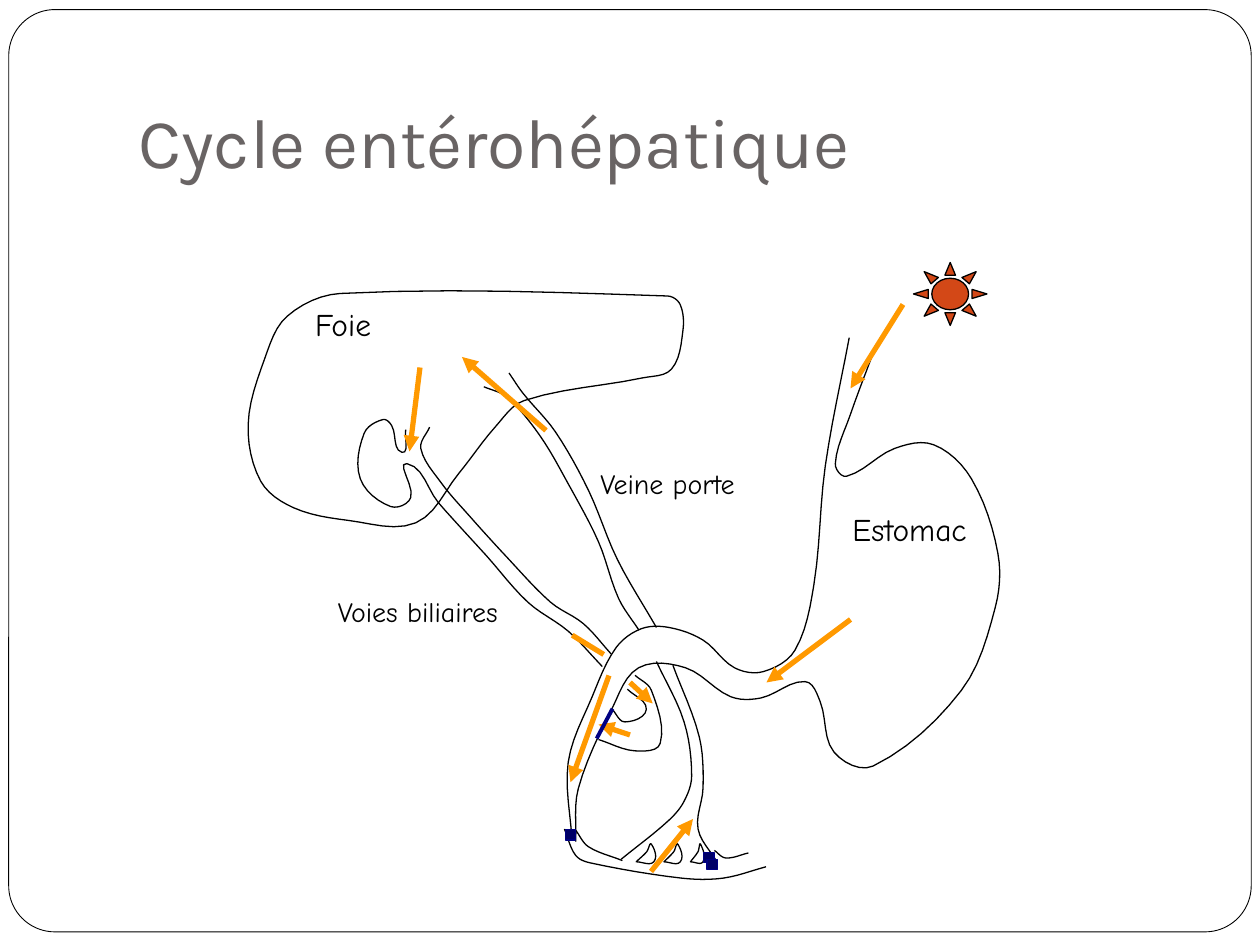
import math

import pptx
import pptx.dml.color
import pptx.enum.shapes
import pptx.enum.text
import pptx.oxml
import pptx.oxml.ns
import pptx.util

Pt = pptx.util.Pt
RGBColor = pptx.dml.color.RGBColor
PRESET = pptx.enum.shapes.MSO_SHAPE

WHITE = RGBColor(0xFF, 0xFF, 0xFF)
BLACK = RGBColor(0x00, 0x00, 0x00)
TITLE_GREY = RGBColor(0x69, 0x64, 0x64)
FLOW_ORANGE = RGBColor(0xFF, 0x99, 0x00)
SUN_RED = RGBColor(0xD3, 0x48, 0x17)
NAVY = RGBColor(0x00, 0x00, 0x66)
NAVY_LINE = RGBColor(0x00, 0x00, 0x82)

GRID = 0.72  # points per unit of the anatomical outlines
CURVE_STEPS = 6
JUNCTION_SIZE = 6

LIVER = [(530, 235), (270, 233), (228, 251), (210, 285), (197, 337), (207, 382),
         (233, 403), (276, 413), (330, 415), (364, 376), (393, 339), (416, 318),
         (510, 300), (533, 293), (542, 263), (540, 242)]

OUTLINES = [
    # Oesophagus, lesser curvature and outer duodenum
    [(674, 268), (655, 370), (646, 464), (631, 516), (606, 533), (583, 530),
     (558, 508), (531, 498), (509, 499), (489, 514), (470, 553), (451, 605),
     (454, 667)],
    # Greater curvature and inner duodenum
    [(695, 275), (675, 329), (663, 368), (672, 378), (710, 356), (741, 353),
     (771, 380), (792, 439), (790, 482), (763, 548), (693, 608), (662, 597),
     (651, 557), (639, 541), (604, 554), (580, 553), (544, 530), (507, 530),
     (486, 562), (459, 626), (457, 668)],
    # Pancreatic duct loops
    [(486, 563), (496, 573), (513, 563), (498, 547)],
    [(475, 587), (504, 596), (524, 590), (517, 548), (504, 536)],
    # Gallbladder and lower wall of the bile duct
    [(478, 529), (451, 501), (419, 478), (386, 441), (348, 399), (323, 368),
     (326, 395), (310, 402), (286, 380), (289, 344), (304, 333), (311, 338),
     (319, 359), (322, 341)],
    # Upper wall of the bile duct
    [(341, 339), (334, 356), (350, 383), (373, 410), (403, 443), (437, 478),
     (463, 495), (485, 519)],
    # Portal vein below the duodenum
    [(493, 682), (531, 651), (543, 636), (549, 616), (543, 573), (521, 525)],
    [(569, 684), (554, 658), (558, 625), (555, 585), (534, 528)],
    # Portal vein above the duodenum
    [(507, 500), (491, 475), (475, 430), (451, 384), (428, 345), (402, 315),
     (384, 307)],
    [(404, 296), (415, 312), (441, 343), (467, 389), (490, 444), (521, 498)],
    # Intestine: upper and lower walls
    [(457, 659), (467, 672), (494, 683)],
    [(567, 675), (576, 681), (594, 677)],
    [(448, 658), (457, 679), (469, 685), (541, 697), (574, 697), (608, 688)],
]

# Gaps between the intestinal vessels: left edge and width
VESSEL_GAPS = [(505, 14), (527, 13), (548, 10)]
GAP_BASE, GAP_TOP = 684, 670

# Start and end of each flow arrow
FLOWS = [
    ((516, 174), (486, 222)),  # into the stomach
    ((486, 354), (438, 390)),  # out of the stomach
    ((348, 386), (326, 447)),  # down the duodenum
    ((372, 498), (396, 468)),  # intestine to portal vein
    ((312, 246), (264, 204)),  # portal vein to liver
    ((240, 210), (234, 258)),  # liver to bile duct
    ((360, 390), (373, 402)),  # into the pancreatic loop
    ((360, 420), (342, 414)),  # back to the duodenum
]
BILE_FLOW = ((327, 363), (345, 374))
PAPILLA = ((341, 422), (350, 405))

# Text, size, left, top and width
LABELS = [
    ("Foie", 18, 173, 171, 50),
    ("Estomac", 18, 480, 288, 85),
    ("Veine porte", 16, 336, 263, 101),
    ("Voies biliaires", 16, 186, 336, 119),
]
JUNCTIONS = [(323, 474), (402, 487), (404, 491)]


def smooth(anchors, closed=False):
    """Sample a smooth curve through the anchors, in grid units."""
    count = len(anchors)

    def anchor(i):
        return anchors[i % count if closed else max(0, min(i, count - 1))]

    def handle(i, reach):
        (ax, ay), (bx, by) = anchor(i - 1), anchor(i + 1)
        span = math.hypot(bx - ax, by - ay) or 1
        x, y = anchor(i)
        return x + (bx - ax) / span * reach, y + (by - ay) / span * reach

    curve = [anchors[0]]
    for i in range(count if closed else count - 1):
        start, end = anchor(i), anchor(i + 1)
        reach = math.dist(start, end) / 3
        controls = (start, handle(i, reach), handle(i + 1, -reach), end)
        for step in range(1, CURVE_STEPS + 1):
            t = step / CURVE_STEPS
            weights = ((1 - t) ** 3, 3 * t * (1 - t) ** 2, 3 * t * t * (1 - t), t ** 3)
            curve.append(tuple(sum(w * c[axis] for w, c in zip(weights, controls))
                               for axis in (0, 1)))
    return curve


def add_outline(slide, anchors, closed=False):
    curve = [(Pt(x * GRID), Pt(y * GRID)) for x, y in smooth(anchors, closed)]
    builder = slide.shapes.build_freeform(*curve[0], scale=1.0)
    builder.add_line_segments(curve[1:], close=closed)
    outline = builder.convert_to_shape()
    outline.shadow.inherit = False
    outline.fill.background()
    outline.line.color.rgb = BLACK
    outline.line.width = Pt(0.75)


def add_vessel_gap(slide, left, width):
    right = left + width
    add_outline(slide, [(left, GAP_BASE), (left + 0.6 * width, GAP_TOP + 6),
                        (right - 2, GAP_TOP), (right, GAP_BASE), (left, GAP_BASE)])


def add_preset(slide, preset, box, fill, line, width=0.75):
    figure = slide.shapes.add_shape(preset, *map(Pt, box))
    figure.shadow.inherit = False
    figure.fill.solid()
    figure.fill.fore_color.rgb = fill
    figure.line.color.rgb = line
    figure.line.width = Pt(width)
    return figure


def add_stroke(slide, ends, color, width, arrow=False):
    stroke = slide.shapes.add_connector(
        pptx.enum.shapes.MSO_CONNECTOR.STRAIGHT, *map(Pt, ends[0] + ends[1]))
    stroke.line.color.rgb = color
    stroke.line.width = Pt(width)
    namespace = pptx.oxml.ns.nsdecls("a")
    if arrow:
        stroke.element.spPr.find(pptx.oxml.ns.qn("a:ln")).append(
            pptx.oxml.parse_xml(f'<a:tailEnd {namespace} type="triangle"/>'))
    stroke.element.spPr.append(pptx.oxml.parse_xml(f"<a:effectLst {namespace}/>"))


def set_text(frame, text, font_name, size, color):
    frame.text = text
    font = frame.paragraphs[0].font
    font.name, font.size, font.color.rgb = font_name, Pt(size), color


def add_label(slide, text, size, left, top, width):
    box = (left, top, width, size * 1.2 + 7.2)
    frame = slide.shapes.add_textbox(*map(Pt, box)).text_frame
    frame.word_wrap = False
    frame.auto_size = pptx.enum.text.MSO_AUTO_SIZE.SHAPE_TO_FIT_TEXT
    set_text(frame, text, "Comic Neue", size, BLACK)


def add_title(slide, text):
    title = slide.shapes.title
    title.left, title.top, title.width, title.height = map(Pt, (72, 21.6, 612, 90))
    frame = title.text_frame
    frame.auto_size = pptx.enum.text.MSO_AUTO_SIZE.NONE
    frame.vertical_anchor = pptx.enum.text.MSO_ANCHOR.BOTTOM
    frame.margin_bottom = Pt(7.2)
    set_text(frame, text, "Karla", 40, TITLE_GREY)
    frame.paragraphs[0].alignment = pptx.enum.text.PP_ALIGN.LEFT


def main():
    deck = pptx.Presentation()
    deck.slide_width, deck.slide_height = Pt(720), Pt(540)
    slide = deck.slides.add_slide(deck.slide_layouts[5])

    # Page frame, behind the title
    page = add_preset(slide, PRESET.ROUNDED_RECTANGLE, (5, 5.5, 710, 527),
                      WHITE, BLACK, 0.5)
    page.adjustments[0] = 0.05
    slide.shapes.title.element.addprevious(page.element)
    add_title(slide, "Cycle entérohépatique")

    # Organs and vessels
    add_outline(slide, LIVER, closed=True)
    for anchors in OUTLINES:
        add_outline(slide, anchors)
    for gap in VESSEL_GAPS:
        add_vessel_gap(slide, *gap)
    for label in LABELS:
        add_label(slide, *label)

    # Flow through the cycle
    for ends in FLOWS:
        add_stroke(slide, ends, FLOW_ORANGE, 3, arrow=True)
    add_stroke(slide, BILE_FLOW, FLOW_ORANGE, 3)
    add_preset(slide, PRESET.SUN, (522, 150, 42, 36), SUN_RED, BLACK)

    # Papilla and intestinal junctions
    add_stroke(slide, PAPILLA, NAVY_LINE, 2.25)
    for corner in JUNCTIONS:
        add_preset(slide, PRESET.RECTANGLE, corner + (JUNCTION_SIZE,) * 2,
                   NAVY, NAVY_LINE)

    deck.save("out.pptx")


if __name__ == "__main__":
    main()
